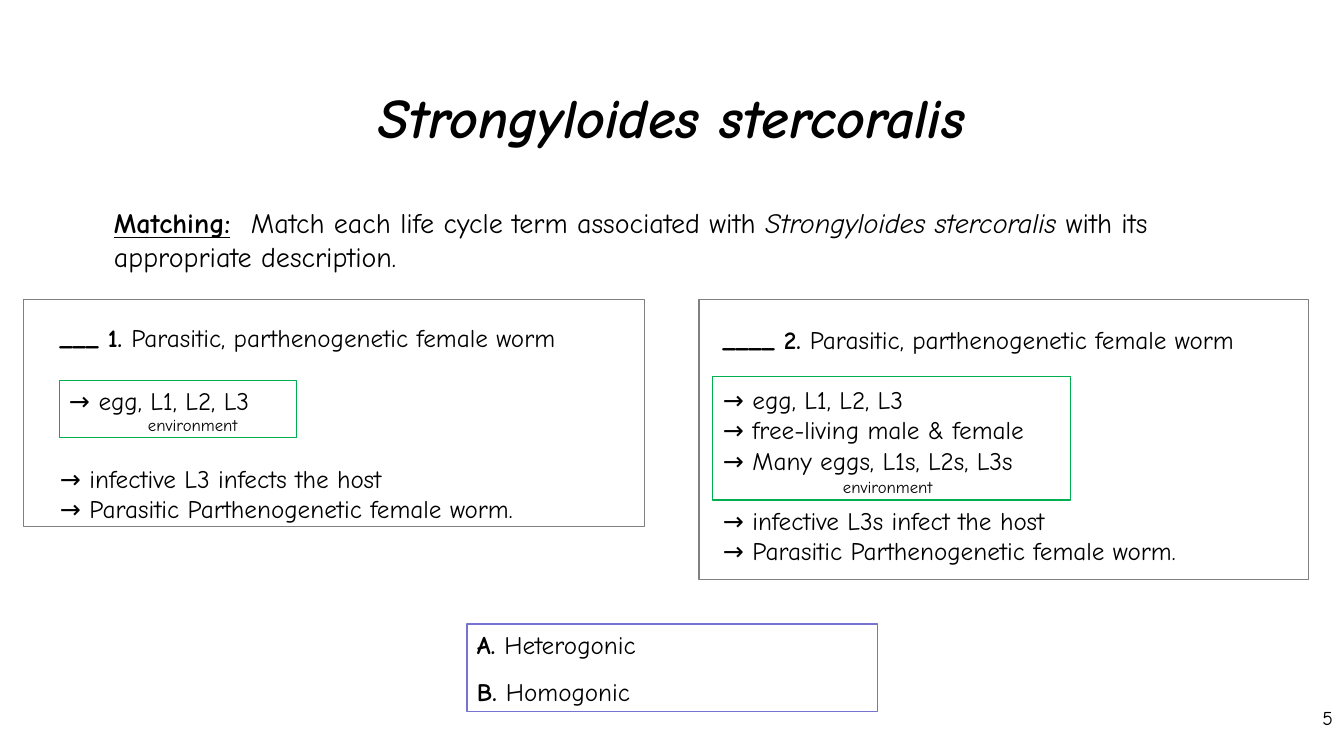
from lxml import etree
from pptx import Presentation
from pptx.dml.color import RGBColor
from pptx.enum.shapes import MSO_SHAPE
from pptx.enum.text import MSO_ANCHOR, PP_ALIGN
from pptx.oxml.ns import qn
from pptx.util import Emu, Pt

RECTANGLE = MSO_SHAPE.RECTANGLE
TOP, MIDDLE = MSO_ANCHOR.TOP, MSO_ANCHOR.MIDDLE
LEFT, CENTER, RIGHT = PP_ALIGN.LEFT, PP_ALIGN.CENTER, PP_ALIGN.RIGHT

BLACK = RGBColor(0x00, 0x00, 0x00)
GRAY = RGBColor(0x80, 0x80, 0x80)
GREEN = RGBColor(0x00, 0xB0, 0x50)
VIOLET = RGBColor(0x75, 0x75, 0xD1)
SLIDE_WIDTH, SLIDE_HEIGHT = 1344, 756


def px(length):
    return Emu(round(length * 12192000 / SLIDE_WIDTH))


class WorksheetSlide:
    font_name = "Comic Neue"

    def __init__(self, deck):
        self.shapes = deck.slides.add_slide(deck.slide_layouts[6]).shapes

    def frame(self, bounds, color):
        outline = self.shapes.add_shape(RECTANGLE, *map(px, bounds))
        outline.shadow.inherit = False
        outline.fill.background()
        outline.line.color.rgb = color
        outline.line.width = Pt(0.75)

    def text(self, bounds, lines, size=18, align=LEFT, anchor=TOP):
        body = self.shapes.add_textbox(*map(px, bounds)).text_frame
        body.word_wrap = True
        body.vertical_anchor = anchor
        for index, line in enumerate(lines):
            paragraph = body.add_paragraph() if index else body.paragraphs[0]
            self.line(paragraph, size, align, **line)

    def line(self, paragraph, size, align, runs, gap=0, indent=0, tab=0, **style):
        paragraph.alignment = align
        properties = paragraph._p.get_or_add_pPr()
        if indent:
            properties.set("marL", str(px(indent)))
        if gap:
            paragraph.space_before = Pt(gap)
        if tab:
            stops = etree.SubElement(properties, qn("a:tabLst"))
            etree.SubElement(stops, qn("a:tab"), pos=str(px(tab)), algn="l")
        font = paragraph.font
        font.name, font.size = self.font_name, Pt(size)
        font.color.rgb = BLACK
        for attribute, value in style.items():
            setattr(font, attribute, value)
        for words, *emphasis in runs:
            run = paragraph.add_run()
            run.text = words
            for attribute in emphasis:
                setattr(run.font, attribute, True)


def plain(words, **options):
    return dict(runs=[(words,)], **options)


def labelled(label, words, **options):
    return dict(runs=[(label, "bold"), (words,)], **options)


def main():
    deck = Presentation()
    deck.slide_width, deck.slide_height = px(SLIDE_WIDTH), px(SLIDE_HEIGHT)
    worksheet = WorksheetSlide(deck)

    worksheet.text((67, 71, 1210, 90),
                   [plain("Strongyloides stercoralis", bold=True, italic=True)],
                   size=40, align=CENTER, anchor=MIDDLE)
    instruction = [
        ("Matching:", "bold", "underline"),
        ("\tMatch each life cycle term associated with ",),
        ("Strongyloides stercoralis", "italic"),
        (" with its appropriate description.",),
    ]
    worksheet.text((104, 201, 1090, 70), [dict(runs=instruction, tab=137)], size=20)

    female = "Parasitic, parthenogenetic female worm"
    larvae = "→ egg, L1, L2, L3"
    outcome = plain("→ Parasitic Parthenogenetic female worm.")
    direct_cycle = [
        labelled("___ 1. ", female),
        plain(larvae, gap=24, indent=9),
        plain("→ infective L3 infects the host", gap=33.6),
        outcome,
    ]
    indirect_cycle = [
        labelled("____ 2. ", female),
        plain(larvae, gap=21.6),
        plain("→ free-living male & female"),
        plain("→ Many eggs, L1s, L2s, L3s"),
        plain("→ infective L3s infect the host", gap=21.6),
        outcome,
    ]
    cycles = [
        (direct_cycle, (50, 317, 595, 212), (138, 410, 117, 30),
         (60, 381, 237, 57), (23, 300, 622, 227)),
        (indirect_cycle, (713, 319, 597, 250), (833, 472, 117, 30),
         (713, 376, 358, 124), (699, 300, 610, 280)),
    ]
    for steps, steps_area, place_area, environment_box, cycle_box in cycles:
        worksheet.text(steps_area, steps)
        worksheet.text(place_area, [plain("environment")], size=12)
        worksheet.frame(environment_box, GREEN)
        worksheet.frame(cycle_box, GRAY)

    answer_box = (467, 624, 411, 88)
    worksheet.frame(answer_box, VIOLET)
    worksheet.text(answer_box, [labelled("A. ", "Heterogonic"),
                                labelled("B. ", "Homogonic", gap=12)])
    worksheet.text((1293, 701, 50, 52), [plain("5")], size=14, align=RIGHT)

    deck.save("out.pptx")


if __name__ == "__main__":
    main()
